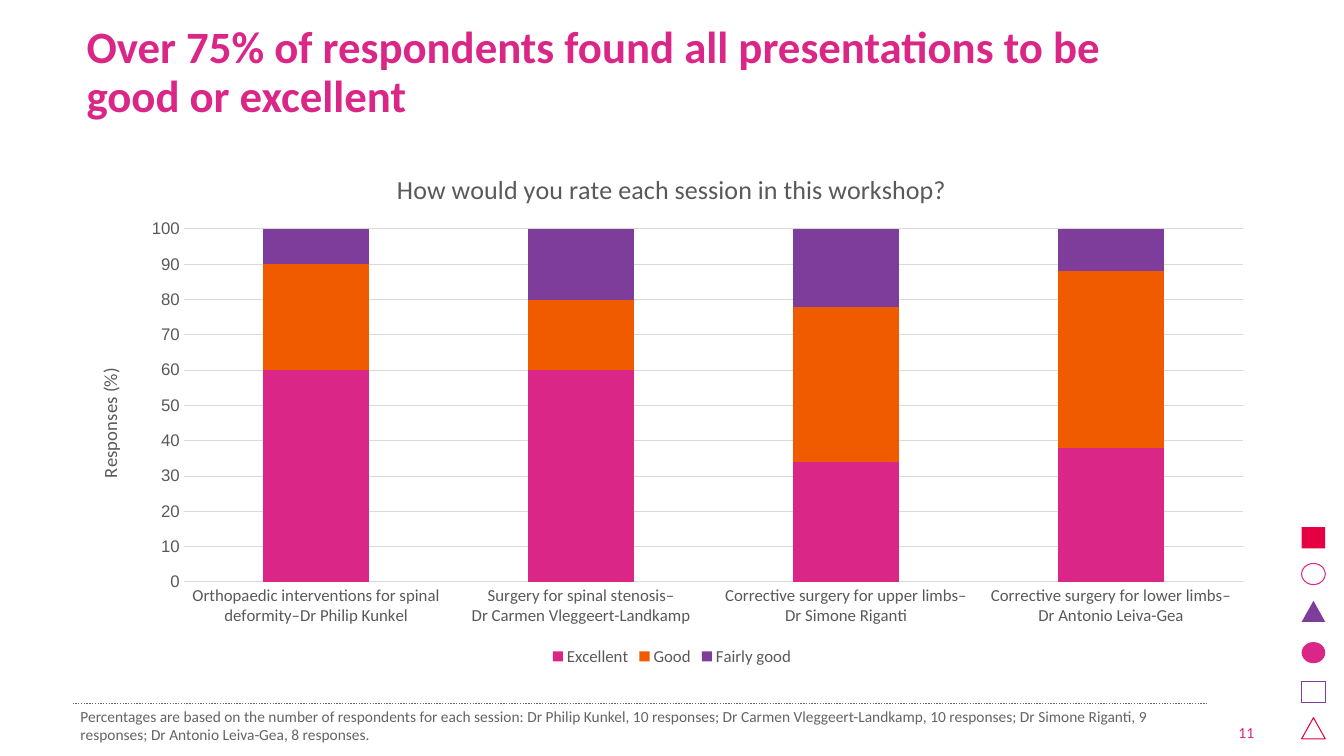
from lxml.etree import SubElement
from pptx import Presentation
from pptx.chart.data import CategoryChartData
from pptx.dml.color import RGBColor
from pptx.enum.chart import XL_CHART_TYPE, XL_LEGEND_POSITION, XL_TICK_MARK
from pptx.enum.dml import MSO_LINE
from pptx.enum.shapes import MSO_CONNECTOR, MSO_SHAPE
from pptx.enum.text import MSO_ANCHOR, PP_ALIGN
from pptx.oxml import parse_xml
from pptx.oxml.ns import nsdecls, qn
from pptx.util import Inches, Pt

WIDTH, HEIGHT = Inches(13.333), Inches(7.5)
FONT = "Calibri"
COLORS = {
    "pink": "DA2686", "red": "E50043", "purple": "7E3C9B", "orange": "F05B00",
    "gray": "646464", "label": "595959", "grid": "D9D9D9",
}

# Margin symbols: preset shape, colour, filled, top in percent of the height
SYMBOLS = [
    (MSO_SHAPE.RECTANGLE, "red", True, 69.73),
    (MSO_SHAPE.OVAL, "pink", False, 74.53),
    (MSO_SHAPE.ISOSCELES_TRIANGLE, "purple", True, 79.47),
    (MSO_SHAPE.OVAL, "pink", True, 84.93),
    (MSO_SHAPE.RECTANGLE, "purple", False, 90.13),
    (MSO_SHAPE.ISOSCELES_TRIANGLE, "red", False, 94.93),
]
SESSIONS = [
    "Orthopaedic interventions for spinal deformity–Dr Philip Kunkel",
    "Surgery for spinal stenosis–\nDr Carmen Vleggeert-Landkamp",
    "Corrective surgery for upper limbs–\nDr Simone Riganti",
    "Corrective surgery for lower limbs–\nDr Antonio Leiva-Gea",
]
RATINGS = [
    ("Excellent", "pink", (60, 60, 34, 38)),
    ("Good", "orange", (30, 20, 44, 50)),
    ("Fairly good", "purple", (10, 20, 22, 12)),
]
FOOTNOTE = (
    "Percentages are based on the number of respondents for each session: "
    "Dr Philip Kunkel, 10 responses; Dr Carmen Vleggeert-Landkamp, 10 responses; "
    "Dr Simone Riganti, 9 responses; Dr Antonio Leiva-Gea, 8 responses."
)


def color(name):
    return RGBColor.from_string(COLORS[name])


def place(left, top, width, height):
    """Turn percentages of the slide into lengths."""
    return (int(WIDTH * left / 100), int(HEIGHT * top / 100),
            int(WIDTH * width / 100), int(HEIGHT * height / 100))


def style_font(font, size, color_name, name=FONT, bold=False):
    font.name, font.size, font.bold = name, Pt(size), bold
    font.color.rgb = color(color_name)


def style_line(line, color_name, width=0.75):
    line.color.rgb = color(color_name)
    line.width = Pt(width)


def add_text(slide, box, lines, size, color_name, anchor,
             bold=False, align=PP_ALIGN.LEFT, spacing=1.0):
    frame = slide.shapes.add_textbox(*place(*box)).text_frame
    frame.word_wrap = True
    frame.vertical_anchor = anchor
    paragraph = frame.paragraphs[0]
    paragraph.alignment = align
    paragraph.line_spacing = spacing
    for index, line in enumerate(lines):
        if index:
            paragraph.add_line_break()
        run = paragraph.add_run()
        run.text = line
        style_font(run.font, size, color_name, bold=bold)


def add_symbol(slide, preset, color_name, filled, top):
    shape = slide.shapes.add_shape(preset, *place(96.85, top, 1.76, 2.8))
    shape.shadow.inherit = False
    if filled:
        shape.fill.solid()
        shape.fill.fore_color.rgb = color(color_name)
        shape.line.fill.background()
    else:
        shape.fill.background()
        style_line(shape.line, color_name)


def add_dotted_rule(slide, left, right, top):
    start, height, end, _ = place(left, top, right, 0)
    rule = slide.shapes.add_connector(MSO_CONNECTOR.STRAIGHT, start, height, end, height)
    style_line(rule.line, "gray", 1)
    rule.line.dash_style = MSO_LINE.ROUND_DOT
    SubElement(rule.element.spPr, qn("a:effectLst"))


def add_chart_title(titled, text, size):
    """Title a chart or an axis."""
    titled.has_title = True
    title = titled.chart_title if hasattr(titled, "chart_title") else titled.axis_title
    run = title.text_frame.paragraphs[0].add_run()
    run.text = text
    style_font(run.font, size, "label")


def fix_plot_area(chart, **shares):
    """Set the inner plot area as shares of the chart."""
    values = "".join(f'<c:{key} val="{value}"/>' for key, value in shares.items())
    layout = parse_xml(
        f'<c:layout {nsdecls("c")}><c:manualLayout><c:layoutTarget val="inner"/>'
        f'<c:xMode val="edge"/><c:yMode val="edge"/>{values}</c:manualLayout></c:layout>')
    plot_area = chart.element.chart.plotArea
    for old_layout in plot_area.findall(qn("c:layout")):
        plot_area.remove(old_layout)
    plot_area.insert(0, layout)


def add_rating_chart(slide, box):
    data = CategoryChartData()
    data.categories = SESSIONS
    for name, _, values in RATINGS:
        data.add_series(name, values)
    chart = slide.shapes.add_chart(
        XL_CHART_TYPE.COLUMN_STACKED, *place(*box), data).chart
    style_font(chart.font, 12, "label")
    add_chart_title(chart, "How would you rate each session in this workshop?", 18.6)
    chart.chart_title.include_in_layout = False
    fix_plot_area(chart, x=0.09, y=0.15, w=0.89, h=0.68)

    # Columns
    plot = chart.plots[0]
    plot.gap_width, plot.overlap, plot.vary_by_categories = 150, 100, False
    for series, (_, color_name, _) in zip(plot.series, RATINGS):
        series.format.fill.solid()
        series.format.fill.fore_color.rgb = color(color_name)

    # Axes
    sessions, responses = chart.category_axis, chart.value_axis
    for axis, font in ((sessions, FONT), (responses, "Arial")):
        axis.major_tick_mark = axis.minor_tick_mark = XL_TICK_MARK.NONE
        style_font(axis.tick_labels.font, 12, "label", font)
    style_line(sessions.format.line, "grid")
    responses.minimum_scale, responses.maximum_scale = 0, 100
    responses.major_unit = 10
    responses.format.line.fill.background()
    style_line(responses.major_gridlines.format.line, "grid")
    add_chart_title(responses, "Responses (%)", 13.3)

    # Legend
    chart.has_legend = True
    chart.legend.position = XL_LEGEND_POSITION.BOTTOM
    chart.legend.include_in_layout = False
    style_font(chart.legend.font, 12, "label")


def main():
    presentation = Presentation()
    presentation.slide_width, presentation.slide_height = WIDTH, HEIGHT
    slide = presentation.slides.add_slide(presentation.slide_layouts[6])

    # Margin decoration and footer rule
    for symbol in SYMBOLS:
        add_symbol(slide, *symbol)
    add_dotted_rule(slide, 5.4, 89.93, 93.07)

    # Title, page number and footnote
    add_text(slide, (5.7, 2.27, 88.6, 14.93),
             ["Over 75% of respondents found all presentations to be ", "good or excellent"],
             32, "pink", MSO_ANCHOR.MIDDLE, bold=True, spacing=0.9)
    add_text(slide, (89.7, 93.47, 4.35, 5.33), ["11"], 11, "pink",
             MSO_ANCHOR.BOTTOM, align=PP_ALIGN.RIGHT)
    add_text(slide, (5.25, 93.07, 84.45, 6), [FOOTNOTE], 11, "gray", MSO_ANCHOR.BOTTOM)

    # Session ratings
    add_rating_chart(slide, (5.7, 20, 88.6, 68.67))
    presentation.save("out.pptx")


if __name__ == "__main__":
    main()
